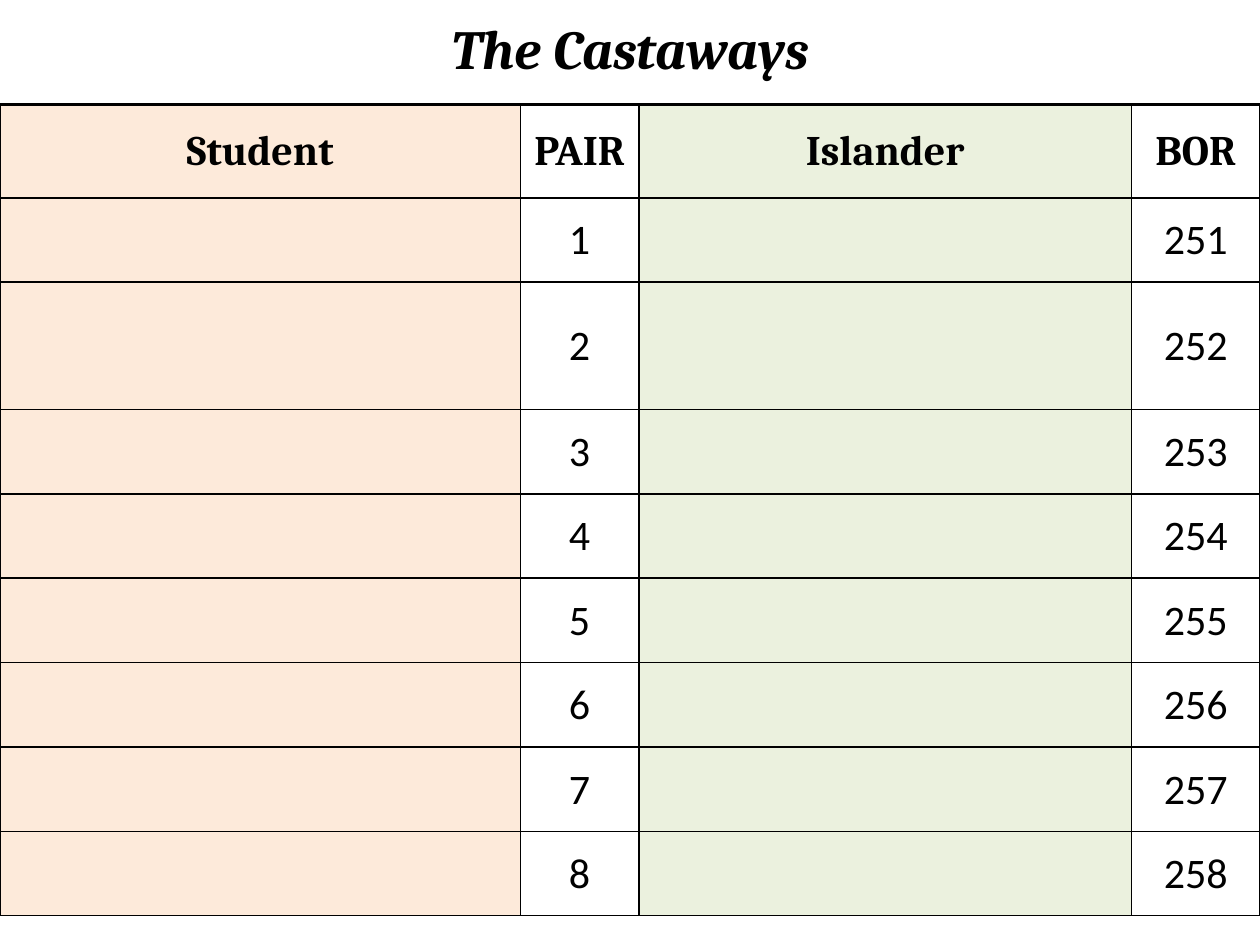
from lxml import etree
from pptx import Presentation
from pptx.dml.color import RGBColor
from pptx.enum.text import MSO_ANCHOR, PP_ALIGN
from pptx.oxml.ns import qn
from pptx.util import Inches, Pt

MIDDLE = MSO_ANCHOR.MIDDLE
CENTER = PP_ALIGN.CENTER

BLACK = RGBColor(0x00, 0x00, 0x00)
WHITE = RGBColor(0xFF, 0xFF, 0xFF)
PEACH = RGBColor(0xFD, 0xEA, 0xDA)
GREEN = RGBColor(0xEB, 0xF1, 0xDE)

SLIDE_W, SLIDE_H = Inches(10), Inches(7.5)
TABLE_TOP = Inches(0.83)

# heading, width in inches, fill
COLUMNS = [
    ("Student", 4.13, PEACH),
    ("PAIR", 0.94, WHITE),
    ("Islander", 3.91, GREEN),
    ("BOR", 1.02, WHITE),
]
PAIRS = 8
FIRST_BOR = 251
HEADER_H, ROW_H, TALL_ROW_H = 0.74, 0.67, 1.01
TALL_PAIR = 2

TITLE_FONT = {"name": "Cambria", "size": Pt(31.5), "bold": True, "italic": True}
HEADER_FONT = {"name": "Cambria", "size": Pt(24), "bold": True}
BODY_FONT = {"name": "Calibri", "size": Pt(24), "bold": False}
CELL_FORMAT = {
    "margin_left": Inches(0.01),
    "margin_right": Inches(0.01),
    "margin_top": Inches(0.01),
    "margin_bottom": 0,
    "vertical_anchor": MIDDLE,
}


def set_attributes(target, values):
    for name, value in values.items():
        setattr(target, name, value)


def write_text(tf, text, font):
    p = tf.paragraphs[0]
    p.alignment = CENTER
    r = p.add_run()
    r.text = text
    set_attributes(r.font, font)
    r.font.color.rgb = BLACK


def add_title(slide, text):
    sp = slide.shapes.add_textbox(
        SLIDE_W // 6, Inches(0.17), SLIDE_W * 2 // 3, Inches(0.42)
    )
    tf = sp.text_frame
    set_attributes(tf, {"word_wrap": True, "vertical_anchor": MIDDLE,
                        "margin_top": 0, "margin_bottom": 0})
    write_text(tf, text, TITLE_FONT)


def set_borders(cell, top_width):
    """Draw black lines on all four sides; call before filling the cell."""
    tc_pr = cell._tc.get_or_add_tcPr()
    for side, width in (("L", 1), ("R", 1), ("T", top_width), ("B", 1)):
        ln = etree.SubElement(tc_pr, qn(f"a:ln{side}"), w=str(Pt(width)))
        fill = etree.SubElement(ln, qn("a:solidFill"))
        etree.SubElement(fill, qn("a:srgbClr"), val=str(BLACK))


def format_cell(cell, text, font, fill, top_width):
    set_attributes(cell, CELL_FORMAT)
    set_borders(cell, top_width)
    cell.fill.solid()
    cell.fill.fore_color.rgb = fill
    if text:
        write_text(cell.text_frame, text, font)


def add_pair_table(slide):
    headings, widths, fills = zip(*COLUMNS)
    rows = [headings]
    heights = [HEADER_H]
    for pair in range(1, PAIRS + 1):
        rows.append(("", str(pair), "", str(FIRST_BOR + pair - 1)))
        heights.append(TALL_ROW_H if pair == TALL_PAIR else ROW_H)

    table = slide.shapes.add_table(
        len(rows), len(COLUMNS), 0, TABLE_TOP, SLIDE_W, Inches(sum(heights))
    ).table
    for column, width in zip(table.columns, widths):
        column.width = Inches(width)
    for i, (row, height) in enumerate(zip(rows, heights)):
        table.rows[i].height = Inches(height)
        font, top_width = (BODY_FONT, 1) if i else (HEADER_FONT, 1.5)
        for j, (text, fill) in enumerate(zip(row, fills)):
            format_cell(table.cell(i, j), text, font, fill, top_width)


def main():
    prs = Presentation()
    prs.slide_width, prs.slide_height = SLIDE_W, SLIDE_H
    slide = prs.slides.add_slide(prs.slide_layouts[6])
    add_title(slide, "The Castaways")
    add_pair_table(slide)
    prs.save("out.pptx")


if __name__ == "__main__":
    main()
